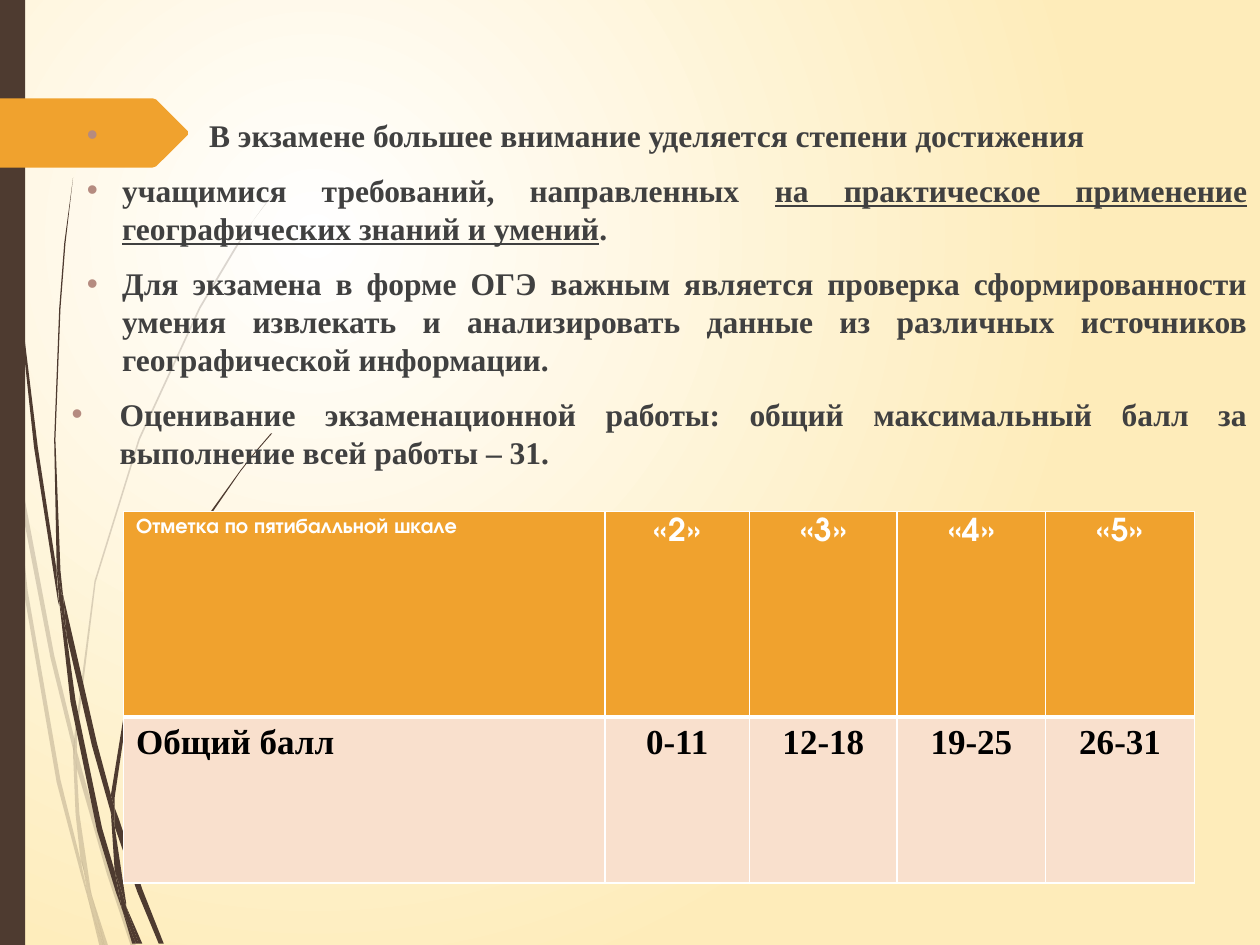
from collections import namedtuple

from lxml.etree import SubElement
from pptx import Presentation
from pptx.dml.color import RGBColor
from pptx.enum.shapes import MSO_SHAPE as Shape
from pptx.enum.text import MSO_ANCHOR as Anchor, MSO_AUTO_SIZE as AutoSize, PP_ALIGN as Align
from pptx.oxml.ns import qn
from pptx.util import Pt

WHITE = RGBColor(0xFF, 0xFF, 0xFF)
CREAM = RGBColor(0xFE, 0xEC, 0xBA)
BROWN = RGBColor(0x4E, 0x3B, 0x30)
ORANGE = RGBColor(0xF0, 0xA2, 0x2E)
PEACH = RGBColor(0xF9, 0xE0, 0xCD)
BULLET = RGBColor(0xB5, 0x8B, 0x80)
GRAY = RGBColor(0x40, 0x40, 0x40)
BLACK = RGBColor(0, 0, 0)
SERIF, SANS = "Times New Roman", "TeX Gyre Adventor"
GRID = Pt(0.72)  # unit of the outline coordinates

Box = namedtuple("Box", "left top width height")

# Stalk outlines as corner points, in grid units
PALE_STALKS = [
    [(8, 350), (6, 322), (0, 282), (0, 299), (7, 344)],
    [(40, 522), (59, 599), (59, 586), (43, 520), (10, 345), (12, 376)],
    [(64, 607), (61, 596), (61, 610), (85, 694), (104, 751), (108, 751), (88, 692)],
    [(83, 751), (86, 751), (73, 711)],
    [(64, 683), (48, 619), (22, 469), (12, 376), (8, 350), (19, 470), (45, 621), (64, 693),
     (70, 714), (69, 707)],
    [(58, 599), (60, 646), (64, 683), (67, 692), (73, 711), (72, 706), (63, 646), (61, 610),
     (61, 608)],
    [(61, 584), (76, 462), (111, 349), (159, 245), (187, 198), (201, 175), (217, 154),
     (217, 153), (201, 175), (186, 197), (158, 244), (110, 348), (75, 461), (59, 584),
     (59, 586), (61, 596)],
    [(70, 714), (79, 751), (82, 751)],
    [(61, 608), (61, 610), (61, 596), (59, 586), (58, 599)],
    [(67, 692), (65, 683), (69, 707), (70, 714), (82, 751), (83, 751), (73, 711)],
]
DARK_STALKS = [
    [(5, 110), (14, 233), (27, 355), (46, 477), (47, 481), (45, 457), (45, 453), (30, 355),
     (15, 232), (6, 109), (4, 48), (3, 0), (2, 0), (3, 48)],
    [(73, 592), (88, 645), (88, 633), (88, 631), (77, 590), (50, 472), (53, 505)],
    [(94, 649), (91, 641), (91, 656), (109, 708), (126, 749), (130, 749), (113, 706)],
    [(91, 691), (81, 657), (60, 556), (53, 505), (47, 477), (56, 557), (77, 659), (92, 708),
     (97, 722), (96, 717)],
    [(50, 472), (48, 453), (44, 349), (48, 245), (52, 193), (58, 141), (51, 193), (47, 245),
     (43, 349), (45, 449), (49, 472)],
    [(110, 749), (113, 749), (100, 719)],
    [(47, 477), (53, 505), (50, 472), (49, 472), (45, 449), (45, 453)],
    [(91, 633), (103, 552), (131, 476), (169, 406), (191, 374), (203, 359), (216, 344),
     (215, 344), (203, 358), (191, 373), (168, 405), (129, 474), (101, 551), (88, 631),
     (91, 641)],
    [(97, 722), (105, 749), (108, 749)],
    [(88, 645), (91, 691), (96, 706), (100, 719), (100, 716), (91, 656), (90, 651)],
    [(88, 645), (90, 651), (91, 656), (91, 641), (88, 631), (88, 633)],
    [(96, 706), (91, 691), (96, 717), (97, 722), (108, 749), (110, 749), (100, 719)],
]
POINTER = [(149, 107), (124, 132), (121, 133), (0, 133), (0, 78), (121, 78), (124, 79),
           (149, 104)]

# Paragraphs as (left margin, first-line indent, [(text, underlined)])
STATEMENTS = [
    (78.5, -69.9, [("В экзамене большее внимание уделяется степени достижения", False)]),
    (28.8, -20.2, [("учащимися требований, направленных ", False),
                   ("на практическое применение географических знаний и умений", True),
                   (".", False)]),
    (28.8, -20.2, [("Для экзамена в форме ОГЭ важным является проверка сформированности "
                    "умения извлекать и анализировать данные из различных источников "
                    "географической информации.", False)]),
    (27.4, -27.4, [("Оценивание экзаменационной работы: общий максимальный балл за "
                    "выполнение всей работы – 31.", False)]),
]
GRADES = [
    ["Отметка по пятибалльной шкале", "«2»", "«3»", "«4»", "«5»"],
    ["Общий балл", "0-11", "12-18", "19-25", "26-31"],
]
COLUMN_WIDTHS = [275, 82.8, 84.2, 85, 85]
ROW_HEIGHTS = [117.4, 95]


def paint(shape, color):
    shape.fill.solid()
    shape.fill.fore_color.rgb = color
    shape.line.fill.background()
    shape.shadow.inherit = False


def set_background(slide):
    fill = slide.background.fill
    fill.gradient()
    for stop, color in zip(fill.gradient_stops, (WHITE, CREAM)):
        stop.color.rgb = color
    gradient = slide.element.find(".//" + qn("a:gradFill"))
    gradient.remove(gradient.find(qn("a:lin")))
    radial = SubElement(gradient, qn("a:path"), path="circle")
    SubElement(radial, qn("a:fillToRect"), l="50000", t="50000", r="100000", b="100000")


def add_outline(slide, box, points, color, opacity=100):
    builder = slide.shapes.build_freeform(*points[0], scale=GRID)
    builder.add_line_segments(points[1:], close=True)
    outline = builder.convert_to_shape(Pt(box.left), Pt(box.top))
    paint(outline, color)
    if opacity < 100:
        rgb = outline.element.spPr.find(qn("a:solidFill")).find(qn("a:srgbClr"))
        SubElement(rgb, qn("a:alpha"), val=str(opacity * 1000))


def add_decoration(slide, box):
    for stalks, opacity in ((PALE_STALKS, 20), (DARK_STALKS, 100)):
        for stalk in stalks:
            add_outline(slide, box, stalk, BROWN, opacity)
    side_band = slide.shapes.add_shape(Shape.RECTANGLE, Pt(box.left), Pt(box.top),
                                       Pt(14.4), Pt(box.height))
    paint(side_band, BROWN)
    add_outline(slide, box, POINTER, ORANGE)


def style_run(run, font, size, color):
    run.font.name, run.font.size, run.font.bold = font, Pt(size), True
    run.font.color.rgb = color


def set_bullet(paragraph, margin, indent):
    props = paragraph._p.get_or_add_pPr()
    props.set("marL", str(Pt(margin)))
    props.set("indent", str(Pt(indent)))
    SubElement(SubElement(props, qn("a:buClr")), qn("a:srgbClr"), val=str(BULLET))
    SubElement(props, qn("a:buFont"), typeface="Arial")
    SubElement(props, qn("a:buChar"), char="•")


def fill_statements(body, box):
    body.left, body.top, body.width, body.height = map(Pt, box)
    frame = body.text_frame
    frame.word_wrap, frame.auto_size = True, AutoSize.NONE
    frame.vertical_anchor = Anchor.TOP
    for index, (margin, indent, pieces) in enumerate(STATEMENTS):
        paragraph = frame.add_paragraph() if index else frame.paragraphs[0]
        paragraph.alignment = Align.JUSTIFY
        paragraph.space_before = Pt(10)
        set_bullet(paragraph, margin, indent)
        for text, underlined in pieces:
            run = paragraph.add_run()
            run.text = text
            style_run(run, SERIF, 18, GRAY)
            run.font.underline = underlined


def set_borders(cell, widths):
    props = cell._tc.get_or_add_tcPr()
    for position, (side, width) in enumerate(zip(("lnL", "lnR", "lnT", "lnB"), widths)):
        line = props.makeelement(qn("a:" + side), {"w": str(Pt(width))})
        fill = SubElement(line, qn("a:solidFill"))
        SubElement(fill, qn("a:srgbClr"), val=str(WHITE))
        props.insert(position, line)


def add_grades(slide, box):
    table = slide.shapes.add_table(len(GRADES), len(GRADES[0]), *map(Pt, box)).table
    for column, width in zip(table.columns, COLUMN_WIDTHS):
        column.width = Pt(width)
    for row, height in zip(table.rows, ROW_HEIGHTS):
        row.height = Pt(height)
    for r, texts in enumerate(GRADES):
        for c, text in enumerate(texts):
            cell = table.cell(r, c)
            cell.text = text
            cell.fill.solid()
            cell.fill.fore_color.rgb = PEACH if r else ORANGE
            set_borders(cell, (1, 1, 3 if r else 1, 1) if r else (1, 1, 1, 3))
            paragraph = cell.text_frame.paragraphs[0]
            paragraph.alignment = Align.CENTER if c else Align.LEFT
            if r:
                style_run(paragraph.runs[0], SERIF, 20, BLACK)
            else:
                style_run(paragraph.runs[0], SANS, 18 if c else 12, WHITE)


def main():
    deck = Presentation()
    deck.slide_width, deck.slide_height = Pt(720), Pt(540)
    slide = deck.slides.add_slide(deck.slide_layouts[1])
    title, body = slide.placeholders
    title.element.getparent().remove(title.element)
    set_background(slide)
    add_decoration(slide, Box(0, 0, 720, 540))
    # Text goes in front of the decoration
    slide.shapes._spTree.append(body.element)
    fill_statements(body, Box(33.8, 62.6, 686.2, 410.4))
    add_grades(slide, Box(70.6, 292.3, 612, 212.4))
    deck.save("out.pptx")


if __name__ == "__main__":
    main()
